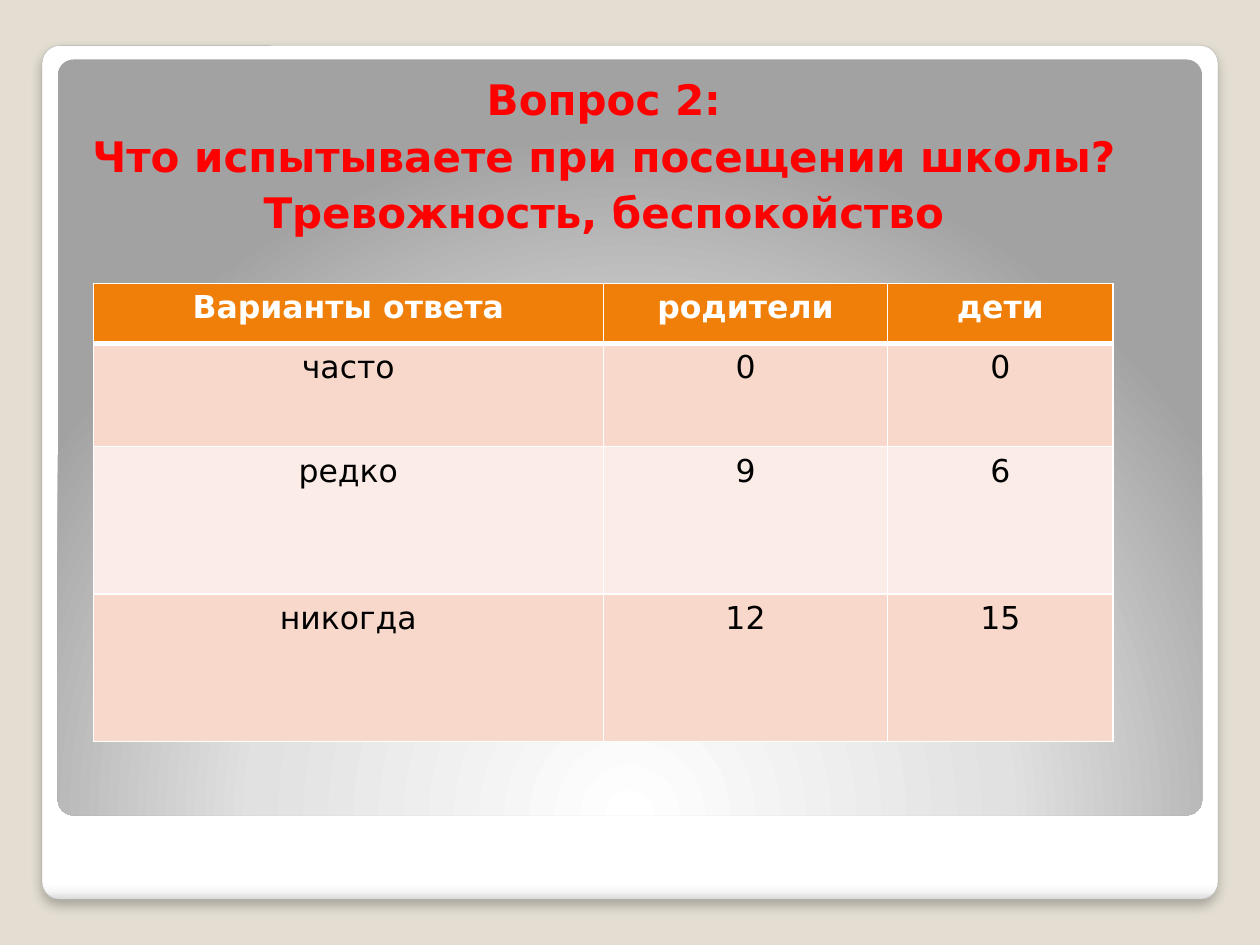
import pptx
import pptx.dml.color
import pptx.enum.shapes
import pptx.enum.text
import pptx.oxml
import pptx.oxml.ns
import pptx.util

Pt = pptx.util.Pt
CENTER = pptx.enum.text.PP_ALIGN.CENTER
COLORS = {
    "background": "E3DED1",
    "white": "FFFFFF",
    "black": "000000",
    "frame_line": "A4A4A4",
    "title": "FF0000",
    "header": "F07F09",
    "band_dark": "F9D8CC",
    "band_light": "FCECE7",
}
FRAME_STOPS = [(0, "FFFFFF"), (98, "FFFFFF"), (99, "F7F7F7"), (100, "DADADA")]
PANEL_STOPS = [(0, "FFFFFF"), (55, "E1E1E1"), (100, "A2A2A2")]
LINEAR = '<a:lin ang="5400000" scaled="0"/>'
RADIAL = (
    '<a:path path="circle">'
    '<a:fillToRect l="50000" t="175000" r="50000" b="-75000"/></a:path>'
)
TITLE_LINES = [
    "Вопрос 2:",
    "Что испытываете при посещении школы?",
    "Тревожность, беспокойство",
]
ANSWERS = [
    ("Варианты ответа", "родители", "дети"),
    ("часто", "0", "0"),
    ("редко", "9", "6"),
    ("никогда", "12", "15"),
]


def color(name):
    return pptx.dml.color.RGBColor.from_string(COLORS[name])


def element(tag, content, attributes=""):
    namespace = pptx.oxml.ns.nsdecls("a")
    return pptx.oxml.parse_xml(f"<a:{tag} {namespace} {attributes}>{content}</a:{tag}>")


class SlideBuilder:
    font_name = "DejaVu Sans"

    def __init__(self, slide):
        self.slide = slide
        fill = slide.background.fill
        fill.solid()
        fill.fore_color.rgb = color("background")

    def style_font(self, font, size, color_name, bold):
        font.name = self.font_name
        font.size = Pt(size)
        font.bold = bold
        font.color.rgb = color(color_name)

    def panel(self, left, top, width, height, stops, direction):
        shape = self.slide.shapes.add_shape(
            pptx.enum.shapes.MSO_SHAPE.ROUNDED_RECTANGLE,
            Pt(left), Pt(top), Pt(width), Pt(height),
        )
        shape.adjustments[0] = 0.021
        shape.shadow.inherit = False
        shape.line.fill.background()
        stop_list = "".join(
            f'<a:gs pos="{position * 1000}"><a:srgbClr val="{value}"/></a:gs>'
            for position, value in stops
        )
        gradient = element("gradFill", f"<a:gsLst>{stop_list}</a:gsLst>{direction}")
        shape.fill.background()
        properties = shape.element.spPr
        empty_fill = properties.find(pptx.oxml.ns.qn("a:noFill"))
        properties.replace(empty_fill, gradient)
        return shape

    def outline(self, shape, color_name, width):
        shape.line.color.rgb = color(color_name)
        shape.line.width = Pt(width)

    def shadow(self, shape, alpha, blur, distance):
        effects = shape.element.spPr.find(pptx.oxml.ns.qn("a:effectLst"))
        effects.append(element(
            "outerShdw",
            f'<a:srgbClr val="{COLORS["black"]}"><a:alpha val="{alpha * 1000}"/></a:srgbClr>',
            f'blurRad="{Pt(blur)}" dist="{Pt(distance)}" dir="5400000" rotWithShape="0"',
        ))

    def title(self, lines, left, top, width, height):
        title = self.slide.shapes.title
        title.left, title.top = Pt(left), Pt(top)
        title.width, title.height = Pt(width), Pt(height)
        frame = title.text_frame
        frame.word_wrap = True
        frame.auto_size = pptx.enum.text.MSO_AUTO_SIZE.NONE
        frame.vertical_anchor = pptx.enum.text.MSO_ANCHOR.TOP
        frame.margin_left, frame.margin_right = Pt(14.4), Pt(7.2)
        frame.margin_top, frame.margin_bottom = Pt(7.2), Pt(3.6)
        frame.text = "\n".join(lines)
        for paragraph in frame.paragraphs:
            paragraph.alignment = CENTER
            paragraph.space_before = Pt(3.5)
            self.style_font(paragraph.font, 24, "title", True)
        first_properties = frame.paragraphs[0]._p.get_or_add_pPr()
        first_properties.set("marR", str(Pt(25)))

    def border(self, cell, side, width):
        line = element(
            side,
            f'<a:solidFill><a:srgbClr val="{COLORS["white"]}"/></a:solidFill>',
            f'w="{Pt(width)}"',
        )
        cell._tc.get_or_add_tcPr().append(line)

    def cell(self, cell, text, row_index):
        is_header = row_index == 0
        cell.text = text
        paragraph = cell.text_frame.paragraphs[0]
        paragraph.alignment = CENTER
        self.style_font(paragraph.font, 18, "white" if is_header else "black", is_header)
        for side in ("lnL", "lnR", "lnT", "lnB"):
            below_header = (row_index, side) in ((0, "lnB"), (1, "lnT"))
            self.border(cell, side, 3 if below_header else 1)
        band = "band_dark" if row_index % 2 else "band_light"
        cell.fill.solid()
        cell.fill.fore_color.rgb = color("header" if is_header else band)

    def table(self, rows, left, top, column_widths, row_heights):
        table = self.slide.shapes.add_table(
            len(rows), len(column_widths), Pt(left), Pt(top),
            Pt(sum(column_widths)), Pt(sum(row_heights)),
        ).table
        for column, width in zip(table.columns, column_widths):
            column.width = Pt(width)
        for row_index, (row, height) in enumerate(zip(table.rows, row_heights)):
            row.height = Pt(height)
            for cell, text in zip(row.cells, rows[row_index]):
                self.cell(cell, text, row_index)


def main():
    presentation = pptx.Presentation()
    presentation.slide_width, presentation.slide_height = Pt(720), Pt(540)
    builder = SlideBuilder(presentation.slides.add_slide(presentation.slide_layouts[5]))

    frame = builder.panel(24, 26, 672, 488, FRAME_STOPS, LINEAR)
    builder.outline(frame, "frame_line", 0.16)
    builder.shadow(frame, 25, 6, 4)
    builder.panel(33, 34, 654, 432, PANEL_STOPS, RADIAL)

    title_element = builder.slide.shapes.title.element
    title_element.getparent().append(title_element)
    builder.title(TITLE_LINES, 24, 35, 660, 120)
    builder.table(ANSWERS, 53.3, 162, [291.5, 162.5, 128.7], [34.3, 59, 84.3, 84.3])
    presentation.save("out.pptx")


if __name__ == "__main__":
    main()
